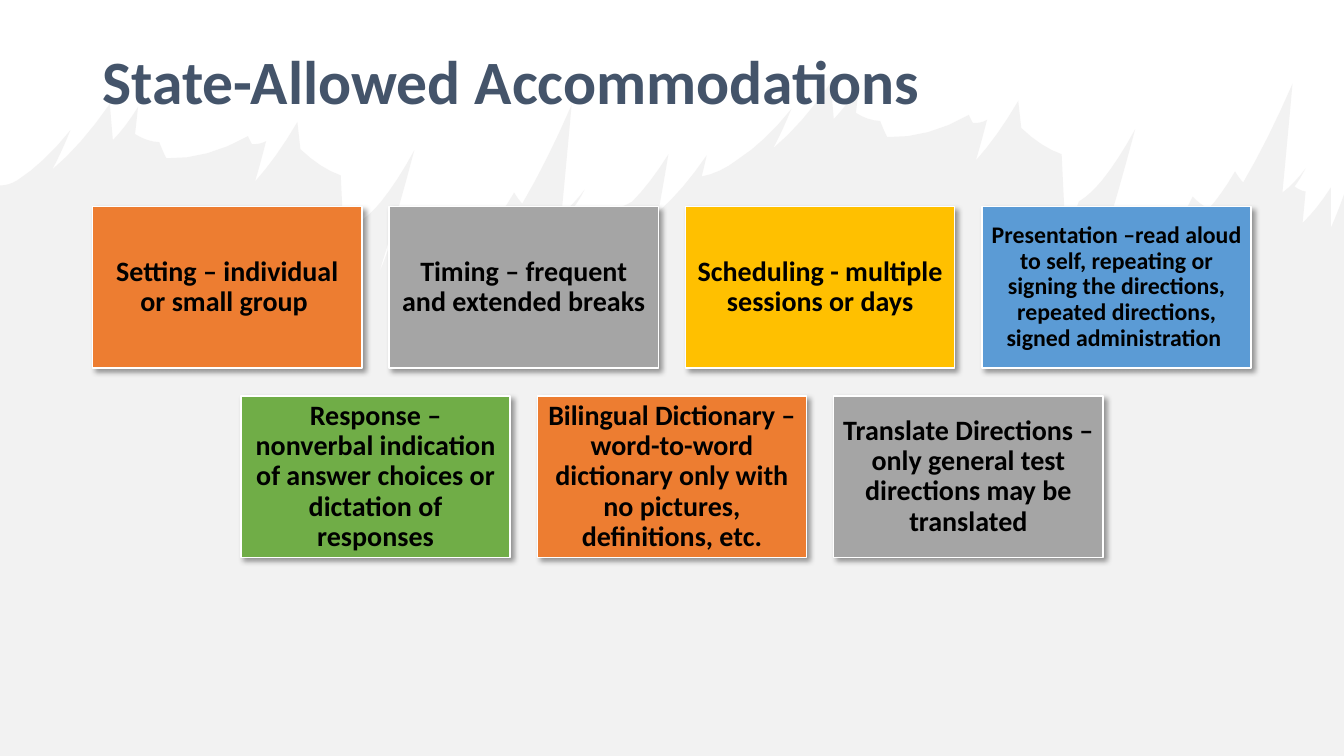
from itertools import pairwise
from typing import NamedTuple

from lxml.etree import SubElement
from pptx import Presentation
from pptx.dml.color import RGBColor
from pptx.enum.shapes import MSO_SHAPE
from pptx.enum.text import MSO_ANCHOR, PP_ALIGN
from pptx.oxml.ns import qn
from pptx.util import Inches, Pt

WIDTH, HEIGHT = 13.33, 7.5
COLORS = {
    "title": "44546A", "text": "000000", "edge": "FFFFFF", "splash": "E7E6E6",
    "orange": "ED7D31", "gray": "A5A5A5", "gold": "FFC000",
    "blue": "5B9BD5", "green": "70AD47",
}


class Flame(NamedTuple):
    """One tongue of the splash: its tip, then the valley to its right."""
    tip: tuple
    valley: tuple


TALL_FLAMES = [
    Flame((7.85, 1.08), (7.67, 1.47)),
    Flame((8.24, 0.82), (8.27, 1.18)),
    Flame((8.52, 0.85), (8.49, 1.12)),
    Flame((8.73, 1.2), (8.8, 1.36)),
    Flame((9.61, 1.14), (9.65, 1.22)),
    Flame((9.79, 1.19), (9.68, 1.59)),
    Flame((10.1, 1), (10.13, 1.27)),
    Flame((10.53, 1.53), (10.57, 2.34)),
]
LOW_FLAMES = [
    Flame((10.7, 2), (10.93, 1.79)),
    Flame((11.26, 1.28), (10.91, 2.5)),
    Flame((11.05, 2.12), (11.1, 2.52)),
    Flame((11.51, 2.19), (11.6, 2.35)),
    Flame((11.83, 1.95), (11.99, 2.07)),
    Flame((12.25, 1.7), (12.33, 1.81)),
    Flame((12.82, 0.83), (12.72, 1.91)),
    Flame((12.95, 1.67), (12.84, 1.85)),
    Flame((12.95, 1.9), (12.92, 2.21)),
]
BRIDGE_FLAMES = [
    Flame((6.05, 2.07), (6.27, 2)),
    Flame((6.63, 1.53), (6.53, 2.1)),
    Flame((7.01, 1.54), (6.96, 1.75)),
]
LAST_FLAME = Flame((13.2, 1.86), (13.2, 2.26))
RIGHT_START = (7.32, 1.58)
LEFT_SHIFT = (-7.15, 0.21)
FLANK_SAG, FLANK_STEPS = 0.15, 4

CARD_ROWS = [
    [("Setting – individual or small group ", "orange", 20),
     ("Timing – frequent and extended breaks", "gray", 20),
     ("Scheduling - multiple sessions or days", "gold", 20),
     ("Presentation –read aloud to self, repeating or signing the directions, "
      "repeated directions, signed administration ", "blue", 17)],
    [("Response – nonverbal indication of answer choices or dictation of responses",
      "green", 20),
     ("Bilingual Dictionary – word-to-word dictionary only with no pictures, "
      "definitions, etc.", "orange", 20),
     ("Translate Directions – only general test directions may be translated",
      "gray", 20)],
]


def color(name):
    return RGBColor.from_string(COLORS[name])


def set_alpha(color_element, percent):
    SubElement(color_element, qn("a:alpha"), val=str(percent * 1000))


def corners(flames):
    return [point for flame in flames for point in flame]


def flank(start, end):
    """Points from start to end along a curve that sags with its horizontal run."""
    (x1, y1), (x2, y2) = start, end
    sag = FLANK_SAG * abs(x2 - x1)
    shares = [step / FLANK_STEPS for step in range(1, FLANK_STEPS + 1)]
    return [(x1 + (x2 - x1) * share,
             y1 + (y2 - y1) * share + 2 * sag * share * (1 - share))
            for share in shares]


def splash_outline():
    """Two equal flame groups joined by a bridge, closed along the page bottom."""
    right = [RIGHT_START, *corners(TALL_FLAMES + LOW_FLAMES)]
    shift_x, shift_y = LEFT_SHIFT
    left = [(x + shift_x, y + shift_y) for x, y in right]
    crest = [(0, 1.84), *left, *corners(BRIDGE_FLAMES), *right, *LAST_FLAME,
             (WIDTH, 1.93)]
    curved = [point for start, end in pairwise(crest) for point in flank(start, end)]
    return [crest[0], *curved, (WIDTH, HEIGHT), (0, HEIGHT)]


def write_text(shape, text, size, ink="text", align=PP_ALIGN.CENTER, inset=None):
    frame = shape.text_frame
    frame.word_wrap = True
    frame.vertical_anchor = MSO_ANCHOR.MIDDLE
    if inset is not None:
        frame.margin_left = frame.margin_right = Inches(inset)
        frame.margin_top = frame.margin_bottom = Inches(inset)
    para = frame.paragraphs[0]
    para.alignment = align
    para.line_spacing = 0.9
    span = para.add_run()
    span.text = text
    span.font.name = "Calibri"
    span.font.size = Pt(size)
    span.font.bold = True
    span.font.color.rgb = color(ink)


class SlideBuilder:
    """Places elements on the page; cards sit on a grid of columns and rows."""
    left, top = 0.92, 2.05
    card_width, card_height = 2.67, 1.6
    column_step, row_step = 2.94, 1.88

    def __init__(self, page):
        self.page = page

    def splash(self):
        start, *rest = [(Inches(x), Inches(y)) for x, y in splash_outline()]
        builder = self.page.shapes.build_freeform(*start)
        builder.add_line_segments(rest)
        shape = builder.convert_to_shape()
        shape.shadow.inherit = False
        shape.line.fill.background()
        shape.fill.solid()
        shape.fill.fore_color.rgb = color("splash")
        fill = shape._element.spPr.find(qn("a:solidFill"))
        set_alpha(fill.find(qn("a:srgbClr")), 50)

    def title(self, text):
        box = self.page.shapes.add_textbox(
            Inches(self.left), Inches(0.36), Inches(11.5), Inches(0.95))
        write_text(box, text, 44, ink="title", align=PP_ALIGN.LEFT)

    def card(self, column, row, text, fill, size):
        card = self.page.shapes.add_shape(
            MSO_SHAPE.RECTANGLE,
            Inches(self.left + column * self.column_step),
            Inches(self.top + row * self.row_step),
            Inches(self.card_width), Inches(self.card_height))
        card.fill.solid()
        card.fill.fore_color.rgb = color(fill)
        card.line.color.rgb = color("edge")
        card.line.width = Pt(1)
        self.drop_shadow(card)
        write_text(card, text, size, inset=0.08 if size == 20 else 0.07)

    def drop_shadow(self, shape):
        shape.shadow.inherit = False
        effects = shape._element.spPr.find(qn("a:effectLst"))
        shadow = SubElement(effects, qn("a:outerShdw"), blurRad=str(Pt(4)),
                            dist=str(Pt(3)), dir=str(45 * 60000),
                            algn="tl", rotWithShape="0")
        set_alpha(SubElement(shadow, qn("a:srgbClr"), val=COLORS["text"]), 40)

    def cards(self, rows):
        """Draw each row of cards centred under the widest one."""
        widest = max(len(cards) for cards in rows)
        for row, cards in enumerate(rows):
            first_column = (widest - len(cards)) / 2
            for index, (text, fill, size) in enumerate(cards):
                self.card(first_column + index, row, text, fill, size)


def main():
    deck = Presentation()
    deck.slide_width, deck.slide_height = Inches(WIDTH), Inches(HEIGHT)
    builder = SlideBuilder(deck.slides.add_slide(deck.slide_layouts[6]))
    builder.splash()
    builder.title("State-Allowed Accommodations")
    builder.cards(CARD_ROWS)
    deck.save("out.pptx")


if __name__ == "__main__":
    main()
